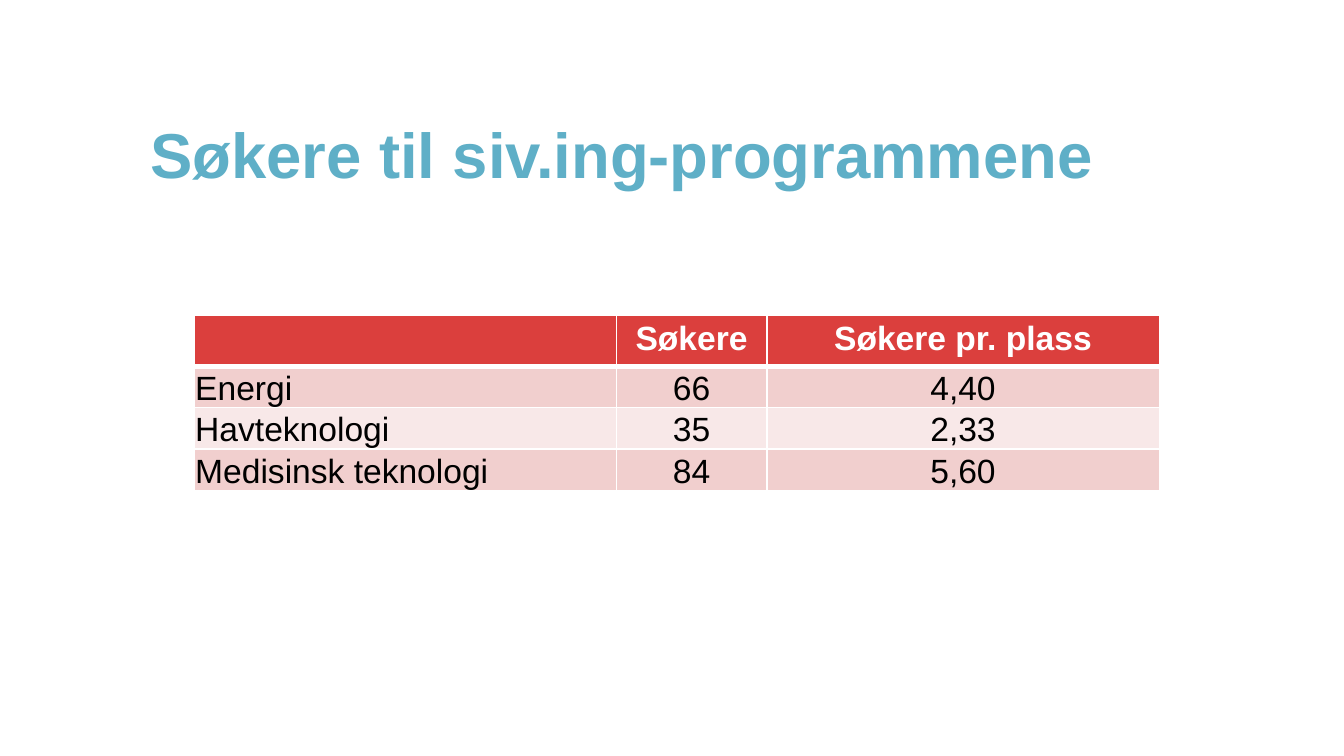
"""Build the slide on applicants to the engineering programmes."""
from dataclasses import dataclass

from lxml import etree
from pptx import Presentation
from pptx.dml.color import RGBColor
from pptx.enum.text import MSO_ANCHOR, PP_ALIGN
from pptx.oxml.ns import qn
from pptx.util import Cm, Pt

LEFT, CENTER = PP_ALIGN.LEFT, PP_ALIGN.CENTER
TOP, BOTTOM = MSO_ANCHOR.TOP, MSO_ANCHOR.BOTTOM
BLANK_LAYOUT = 6


@dataclass(frozen=True)
class Theme:
    """Colours, font and type sizes."""
    font: str = "Arial"
    title_size: int = 34
    title_leading: float = 43.2
    table_size: int = 18
    title: str = "5FAFC7"
    header: str = "DB3F3D"
    bands: tuple = ("F1CFCE", "F8E8E8")
    light: str = "FFFFFF"
    dark: str = "000000"
    rule: int = 1
    header_rule: int = 3


def apply(target, values):
    """Set each named attribute of the target."""
    for name, value in values.items():
        setattr(target, name, value)


def margins(left, top, right, bottom):
    """Give the four inner margins as format values."""
    return {"margin_left": Cm(left), "margin_top": Cm(top),
            "margin_right": Cm(right), "margin_bottom": Cm(bottom)}


class Painter:
    """Hold the theme and the current page."""

    def __init__(self, theme, page):
        self.theme = theme
        self.page = page

    def add_span(self, para, text, size, color, bold):
        """Add one styled span to a paragraph."""
        span = para.add_run()
        span.text = text
        apply(span.font, {"name": self.theme.font, "size": Pt(size), "bold": bold})
        span.font.color.rgb = RGBColor.from_string(color)

    def title(self, text, left, top, width, height):
        """Place the page title."""
        box = self.page.shapes.add_textbox(Cm(left), Cm(top), Cm(width), Cm(height))
        frame = box.text_frame
        apply(frame, {"word_wrap": True, "vertical_anchor": BOTTOM, **margins(0, 0, 0, 0)})
        para = frame.paragraphs[0]
        para.line_spacing = Pt(self.theme.title_leading)
        self.add_span(para, text, self.theme.title_size, self.theme.title, True)

    def border(self, cell, side, width):
        """Draw one edge of a cell."""
        properties = cell._tc.get_or_add_tcPr()
        line = etree.SubElement(properties, qn(f"a:ln{side}"), w=str(Pt(width)))
        fill = etree.SubElement(line, qn("a:solidFill"))
        etree.SubElement(fill, qn("a:srgbClr"), val=self.theme.light)

    def cell(self, cell, text, row, column):
        """Fill and style one table cell by its place in the grid."""
        theme = self.theme
        is_header = row == 0
        heavy_side = {0: "B", 1: "T"}.get(row)
        for side in "LRTB":
            self.border(cell, side, theme.header_rule if side == heavy_side else theme.rule)
        cell.fill.solid()
        color = theme.header if is_header else theme.bands[(row - 1) % 2]
        cell.fill.fore_color.rgb = RGBColor.from_string(color)
        inset = margins(0.18, 0.1, 0.18, 0.1) if is_header else margins(0.02, 0.02, 0.02, 0)
        apply(cell, {"vertical_anchor": TOP if is_header else BOTTOM, **inset})
        para = cell.text_frame.paragraphs[0]
        para.alignment = CENTER if column else LEFT
        if text:
            self.add_span(para, text, theme.table_size,
                          theme.light if is_header else theme.dark, is_header)

    def table(self, rows, left, top, widths, heights):
        """Place a table with a header row and banded body rows."""
        table = self.page.shapes.add_table(
            len(rows), len(widths), Cm(left), Cm(top),
            Cm(sum(widths)), Cm(sum(heights))).table
        for column, width in zip(table.columns, widths):
            column.width = Cm(width)
        for row, height in zip(table.rows, heights):
            row.height = Cm(height)
        for i, texts in enumerate(rows):
            for j, text in enumerate(texts):
                self.cell(table.cell(i, j), text, i, j)


def main():
    """Build and save the deck."""
    deck = Presentation()
    apply(deck, {"slide_width": Cm(25.4), "slide_height": Cm(14.29)})
    page = deck.slides.add_slide(deck.slide_layouts[BLANK_LAYOUT])
    painter = Painter(Theme(), page)
    painter.title("Søkere til siv.ing-programmene", 2.84, 2.24, 19.86, 1.37)
    applicants = [
        ("", "Søkere", "Søkere pr. plass"),
        ("Energi", "66", "4,40"),
        ("Havteknologi", "35", "2,33"),
        ("Medisinsk teknologi", "84", "5,60"),
    ]
    painter.table(applicants, 3.67, 5.95, (7.98, 2.84, 7.42), (0.97, 0.78, 0.78, 0.78))
    deck.save("out.pptx")


if __name__ == "__main__":
    main()
